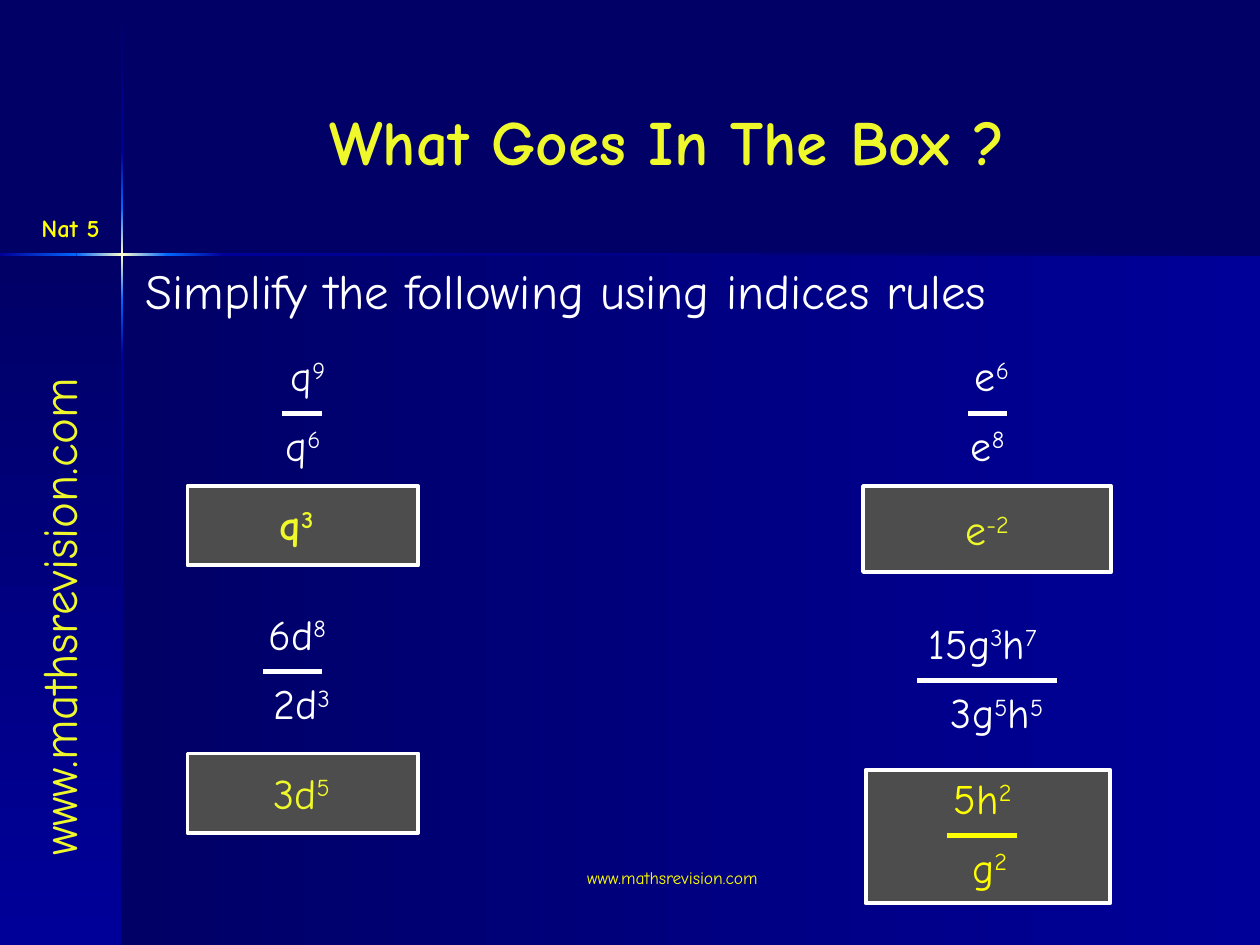
from dataclasses import dataclass
from itertools import pairwise

from lxml.etree import SubElement
from pptx import Presentation
from pptx.dml.color import RGBColor as Rgb
from pptx.enum.shapes import MSO_CONNECTOR as Link, MSO_SHAPE as Kind
from pptx.enum.text import MSO_ANCHOR as Anchor, PP_ALIGN as Align
from pptx.oxml.ns import qn
from pptx.util import Cm, Pt


@dataclass(frozen=True)
class Theme:
    font: str = "Comic Neue"
    navy: str = "000066"
    blue: str = "000099"
    azure: str = "0066FF"
    glow: str = "FFFFCC"
    white: str = "FFFFFF"
    grey: str = "4D4D4D"
    lemon: str = "EEF82A"
    yellow: str = "FFFF00"
    title: int = 36
    lead: int = 28
    maths: int = 24
    label: int = 14
    foot: int = 10
    frame: float = 2.25
    bar: float = 3


@dataclass(frozen=True)
class Area:
    x: float
    y: float
    w: float
    h: float

    def cm(self) -> tuple:
        return Cm(self.x), Cm(self.y), Cm(self.w), Cm(self.h)


@dataclass(frozen=True)
class Ratio:
    """A fraction; each half has its own centre, and the bar runs from start to end."""
    over: str
    under: str
    top_mid: float
    low_mid: float
    start: float
    end: float
    y: float
    color: str


@dataclass(frozen=True)
class Answer:
    text: str
    mid: float
    y: float
    bold: bool = False


T = Theme()
WIDE, HIGH = 25.4, 19.05
CROSS_X, CROSS_Y, THIN = 2.46, 5.13, 0.05
TERM_W, TERM_H = 4, 1.27

# Colour stops along each arm of the glowing cross: (position, colour)
DOWN = [(0.03, T.navy), (3.07, T.blue), (4.19, T.azure), (CROSS_Y, T.glow),
        (6.05, T.azure), (7.16, T.blue), (HIGH, T.navy)]
ACROSS = [(0, T.blue), (1.54, T.azure), (CROSS_X, T.glow),
          (3.38, T.azure), (4.5, T.blue), (WIDE, T.navy)]

FRAMES = [Area(17.45, 15.52, 4.93, 2.69), Area(3.78, 9.8, 4.65, 1.6),
          Area(3.78, 15.19, 4.65, 1.6), Area(17.4, 9.8, 5, 1.73)]

# A bar in the text switches between the base line and superscript
ANSWERS = [Answer("q|3", 5.98, 9.93, True), Answer("3d|5", 6.08, 15.34),
           Answer("e|-2", 19.9, 10.03)]

RATIOS = [
    Ratio("q|9", "q|6", 6.21, 6.11, 5.69, 6.5, 8.33, T.white),
    Ratio("e|6", "e|8", 20, 19.91, 19.51, 20.29, 8.33, T.white),
    Ratio("6d|8", "2d|3", 5.99, 6.08, 5.31, 6.5, 13.54, T.white),
    Ratio("15g|3|h|7", "3g|5|h|5", 19.81, 20.1, 18.49, 21.31, 13.72, T.white),
    Ratio("5h|2", "g|2", 19.81, 19.95, 19.1, 20.5, 16.84, T.yellow),
]


def fade(shapes, area: Area, first: str, last: str, down: bool) -> None:
    """Draw a borderless rectangle that blends two colours."""
    box = shapes.add_shape(Kind.RECTANGLE, *area.cm())
    box.shadow.inherit = False
    box.line.fill.background()
    box.fill.gradient()
    box.fill.gradient_angle = 270 if down else 0
    for stop, color in zip(box.fill.gradient_stops, (first, last)):
        stop.color.rgb = Rgb.from_string(color)


def cross(shapes) -> None:
    half = THIN / 2
    for (a, first), (b, last) in pairwise(DOWN):
        fade(shapes, Area(CROSS_X - half, a, THIN, b - a), first, last, True)
    for (a, first), (b, last) in pairwise(ACROSS):
        fade(shapes, Area(a, CROSS_Y - half, b - a, THIN), first, last, False)


def write(shapes, area: Area, text: str, size: int, color: str,
          bold: bool = False, align: Align = Align.CENTER,
          anchor: Anchor = Anchor.TOP, turn: int = 0) -> None:
    box = shapes.add_textbox(*area.cm())
    box.rotation = turn
    frame = box.text_frame
    frame.word_wrap = True
    frame.vertical_anchor = anchor
    para = frame.paragraphs[0]
    para.alignment = align
    for i, part in enumerate(text.split("|")):
        run = para.add_run()
        run.text = part
        run.font.name = T.font
        run.font.size = Pt(size)
        run.font.bold = bold
        run.font.color.rgb = Rgb.from_string(color)
        if i % 2:
            run.font._element.set("baseline", "30000")


def term(shapes, text: str, mid: float, y: float, color: str,
         bold: bool = False) -> None:
    area = Area(mid - TERM_W / 2, y, TERM_W, TERM_H)
    write(shapes, area, text, T.maths, color, bold)


def panel(shapes, area: Area) -> None:
    box = shapes.add_shape(Kind.RECTANGLE, *area.cm())
    box.shadow.inherit = False
    box.fill.solid()
    box.fill.fore_color.rgb = Rgb.from_string(T.grey)
    box.line.color.rgb = Rgb.from_string(T.white)
    box.line.width = Pt(T.frame)


def ratio(shapes, item: Ratio) -> None:
    term(shapes, item.over, item.top_mid, item.y - 1.4, item.color)
    term(shapes, item.under, item.low_mid, item.y, item.color)
    bar = shapes.add_connector(Link.STRAIGHT, Cm(item.start), Cm(item.y),
                               Cm(item.end), Cm(item.y))
    bar.line.color.rgb = Rgb.from_string(item.color)
    bar.line.width = Pt(T.bar)
    SubElement(bar._element.spPr, qn("a:effectLst"))


def main() -> None:
    deck = Presentation()
    deck.slide_width, deck.slide_height = Cm(WIDE), Cm(HIGH)
    slide = deck.slides.add_slide(deck.slide_layouts[6])
    slide.background.fill.solid()
    slide.background.fill.fore_color.rgb = Rgb.from_string(T.navy)
    shapes = slide.shapes

    below = HIGH - CROSS_Y
    fade(shapes, Area(CROSS_X, CROSS_Y, WIDE - CROSS_X, below), T.navy, T.blue, False)
    fade(shapes, Area(0, CROSS_Y, CROSS_X, below), T.navy, T.blue, True)
    cross(shapes)

    site = "www.mathsrevision.com"
    write(shapes, Area(-4.39, 11.2, 11.15, 1.45), site, T.lead, T.lemon,
          align=Align.LEFT, turn=270)
    write(shapes, Area(9.53, 17.35, 8.05, 1.27), site, T.foot, T.yellow)
    write(shapes, Area(2.97, 0.84, 20.96, 3.99), "What Goes In The Box ?",
          T.title, T.lemon, True, anchor=Anchor.MIDDLE)
    write(shapes, Area(0.46, 4.17, 1.93, 0.86), "Nat 5", T.label, T.yellow, True)
    write(shapes, Area(2.69, 5.13, 22.71, 1.45),
          "Simplify the following using indices rules", T.lead, T.white,
          align=Align.LEFT)

    for area in FRAMES:
        panel(shapes, area)
    for item in ANSWERS:
        term(shapes, item.text, item.mid, item.y, T.lemon, item.bold)
    for item in RATIOS:
        ratio(shapes, item)

    deck.save("out.pptx")


if __name__ == "__main__":
    main()
